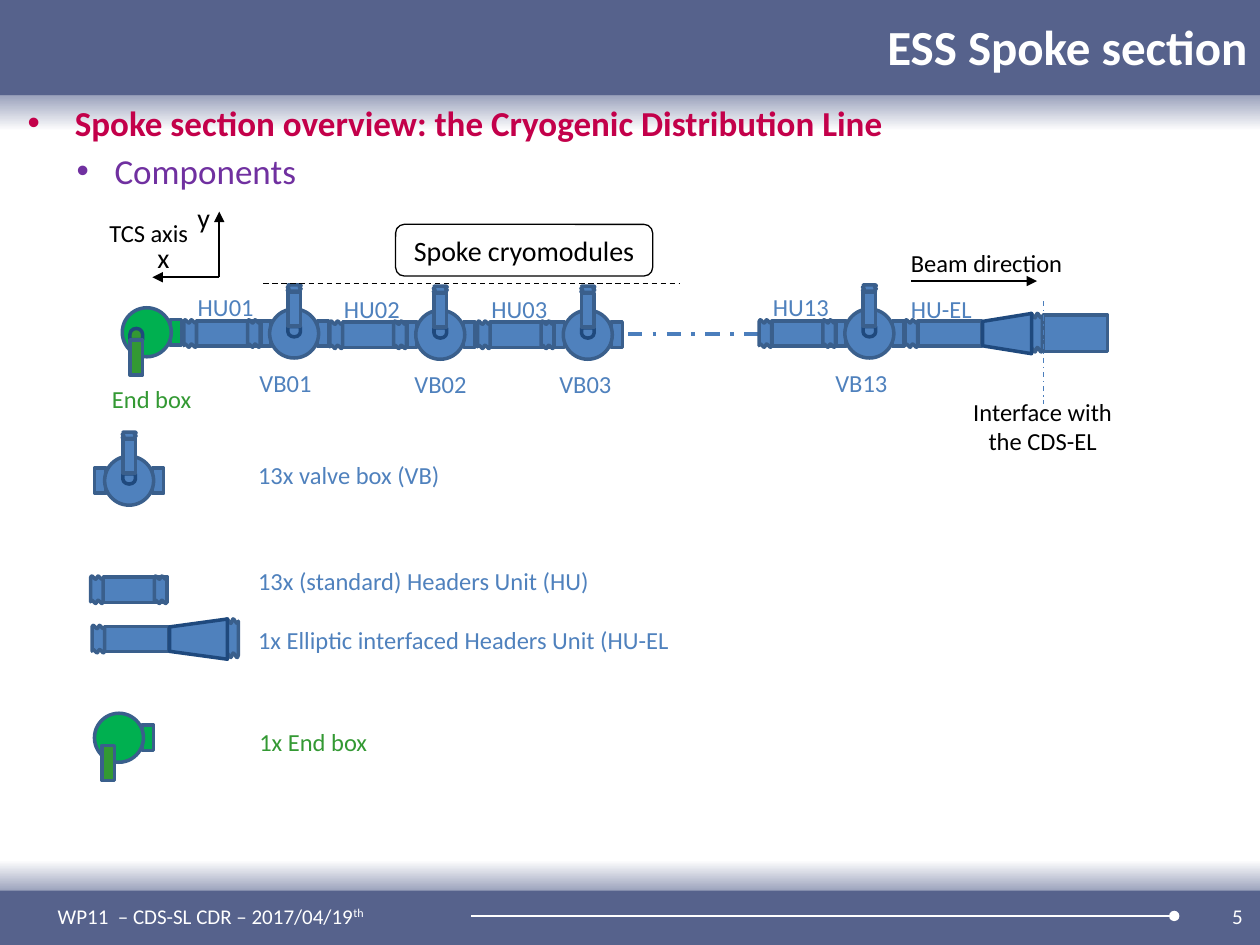
from dataclasses import dataclass

from lxml import etree
from pptx import Presentation
from pptx.dml.color import RGBColor
from pptx.enum import dml, shapes as kinds, text as te
from pptx.oxml import ns
from pptx.util import Pt

SLATE = RGBColor(0x56, 0x62, 0x8C)
HAZE = RGBColor(0x9C, 0xA3, 0xBD)
WHITE = RGBColor(0xFF, 0xFF, 0xFF)
BLACK = RGBColor(0, 0, 0)
CRIMSON = RGBColor(0xC3, 0x00, 0x4A)
PURPLE = RGBColor(0x70, 0x30, 0xA0)
BLUE = RGBColor(0x4F, 0x81, 0xBD)
BEAM_BLUE = RGBColor(0x4B, 0x7E, 0xBC)
EDGE = RGBColor(0x3A, 0x5F, 0x8C)
DARK_EDGE = RGBColor(0x1F, 0x49, 0x7D)
GREEN = RGBColor(0x00, 0xB0, 0x50)
LEAF = RGBColor(0x33, 0x99, 0x33)

Kind = kinds.MSO_SHAPE
Align = te.PP_ALIGN
Dash = dml.MSO_LINE
PIPE_HEIGHT = 14.4
STUB_OFFSET = 16.5
VALVE_OFFSET = 63


@dataclass
class Module:
    """A headers unit followed by its valve box."""
    number: str
    left: float
    center_y: float
    valve_label_left: float


@dataclass
class Label:
    text: str
    left: float
    top: float
    width: float
    color: RGBColor = BLACK
    size: float = 14


@dataclass
class Line:
    start: tuple[float, float]
    end: tuple[float, float]
    color: RGBColor = BLACK
    weight: float = 0.75
    dash: Dash | None = None
    tail: str = ""


MODULES = [
    Module("01", 105.1, 190.6, 141.1),
    Module("02", 188.6, 191.3, 229.7),
    Module("03", 272.9, 191.3, 312.5),
    Module("13", 433.8, 190.6, 470.2),
]
LABELS = [
    Label("End box", 56.9, 216, 60.5, LEAF),
    Label("Beam direction", 513.4, 138.2, 102.2),
    Label("x", 82.8, 133.9, 21.6, size=16),
    Label("y", 105.8, 110.9, 21.6, size=16),
    Label("HU-EL", 513.4, 164.2, 49.7, BLUE),
    Label("TCS axis", 55.4, 121, 59.8),
    Label("1x End box", 141.1, 411.8, 77, LEAF),
    Label("13x valve box (VB)", 140.4, 259.2, 119.5, BLUE),
]
LINES = [
    Line((596.2, 172.1), (596.2, 231.1), BEAM_BLUE, dash=Dash.DASH_DOT),
    Line((520.6, 160.6), (592.6, 160.6), weight=1, tail="triangle"),
    Line((125.3, 158.4), (87.1, 158.4), weight=1, tail="triangle"),
    Line((125.3, 158.4), (125.3, 121), weight=1, tail="triangle"),
    Line((150.5, 162), (388.1, 162), dash=Dash.DASH),
    Line((269.3, 523.4), (671, 523.4), WHITE, 1.5, tail="oval"),
]

presentation = Presentation()
presentation.slide_width, presentation.slide_height = Pt(720), Pt(540)
slide = presentation.slides.add_slide(presentation.slide_layouts[5])


def add_band(top: float, height: float, colors: list[RGBColor]) -> None:
    """Full-width band, solid for one colour and fading downwards for two."""
    band = slide.shapes.add_shape(Kind.RECTANGLE, 0, Pt(top), Pt(720), Pt(height))
    band.shadow.inherit = False
    band.line.fill.background()
    if len(colors) == 1:
        band.fill.solid()
        band.fill.fore_color.rgb = colors[0]
        return
    band.fill.gradient()
    band.fill.gradient_angle = 270
    for stop, color in zip(band.fill.gradient_stops, colors):
        stop.color.rgb = color


def add_part(kind: Kind, center_x: float, center_y: float, width: float, height: float,
             fill: RGBColor = BLUE, edge: RGBColor = EDGE, rotation: float = 0):
    part = slide.shapes.add_shape(kind, Pt(center_x - width / 2), Pt(center_y - height / 2),
                                  Pt(width), Pt(height))
    part.shadow.inherit = False
    part.rotation = rotation
    part.fill.solid()
    part.fill.fore_color.rgb = fill
    part.line.color.rgb = edge
    part.line.width = Pt(2)
    return part


def add_line(line: Line) -> None:
    connector = slide.shapes.add_connector(kinds.MSO_CONNECTOR.STRAIGHT,
                                           *map(Pt, line.start + line.end))
    connector.line.color.rgb = line.color
    connector.line.width = Pt(line.weight)
    if line.dash:
        connector.line.dash_style = line.dash
    if line.tail:
        etree.SubElement(connector.line._get_or_add_ln(), ns.qn("a:tailEnd"), type=line.tail)
    etree.SubElement(connector._element.spPr, ns.qn("a:effectLst"))


def write(paragraph, content: str, size: float = 14, color: RGBColor = BLACK,
          bold: bool = False, align: Align = Align.LEFT):
    paragraph.alignment = align
    run = paragraph.add_run()
    run.text = content
    font = run.font
    font.name, font.size, font.bold = "Calibri", Pt(size), bold
    font.color.rgb = color
    return run


def add_text(content: str, left: float, top: float, width: float, height: float = 24.5,
             wrap: bool = False, middle: bool = False, **style):
    frame = slide.shapes.add_textbox(Pt(left), Pt(top), Pt(width), Pt(height)).text_frame
    frame.word_wrap = wrap
    if middle:
        frame.vertical_anchor = te.MSO_ANCHOR.MIDDLE
    write(frame.paragraphs[0], content, **style)
    return frame


def add_bullet(paragraph, indent: float, hanging: float) -> None:
    properties = paragraph._p.get_or_add_pPr()
    properties.set("marL", str(Pt(indent)))
    properties.set("indent", str(-Pt(hanging)))
    etree.SubElement(properties, ns.qn("a:buFont"), typeface="Arial")
    etree.SubElement(properties, ns.qn("a:buChar"), char="•")


def add_pipe_start(left: float, center_y: float) -> None:
    add_part(Kind.RECTANGLE, left + 25.6, center_y, 36.7, PIPE_HEIGHT)
    add_part(Kind.DOUBLE_WAVE, left + 3.6, center_y, 7.2, 15.8)


def add_headers_unit(left: float, center_y: float) -> None:
    add_pipe_start(left, center_y)
    add_part(Kind.DOUBLE_WAVE, left + 40, center_y, 7.2, 15.8)


def add_elliptic_unit(left: float, center_y: float, cone_length: float) -> None:
    """Headers unit that widens to the elliptic line."""
    cone_left = left + 44.3
    add_part(Kind.DOUBLE_WAVE, cone_left + cone_length + 2.6, center_y - 0.5, 7.2, 22.3)
    add_pipe_start(left, center_y)
    cone = add_part(Kind.TRAPEZOID, cone_left + cone_length / 2, center_y, 23, cone_length,
                    edge=DARK_EDGE, rotation=270)
    cone.adjustments[0] = 0.197


def add_valve_box(x: float, y: float) -> None:
    for side in (-1, 1):
        add_part(Kind.RECTANGLE, x + side * STUB_OFFSET, y, 6.5, PIPE_HEIGHT)
    add_part(Kind.OVAL, x, y, 28, 28)
    add_part(Kind.FLOWCHART_DELAY, x, y - 1, 5.8, 7.2, edge=DARK_EDGE, rotation=90)
    add_part(Kind.RECTANGLE, x, y - 14, 19.4, 7.2, rotation=90)
    add_part(Kind.DOUBLE_WAVE, x, y - 26, 3.6, 7.9, rotation=90)


def add_end_box(x: float, y: float, with_elbow: bool) -> None:
    add_part(Kind.RECTANGLE, x + STUB_OFFSET, y, 6.5, PIPE_HEIGHT, GREEN)
    add_part(Kind.OVAL, x, y, 28, 28, GREEN)
    if with_elbow:
        add_part(Kind.FLOWCHART_DELAY, x - 6, y + 1, 6.5, 7.2, LEAF, DARK_EDGE, 270)
    add_part(Kind.RECTANGLE, x - 6, y + 14.4, 20.2, 7.2, LEAF, rotation=270)


def add_frame() -> None:
    add_band(0, 54.7, [SLATE])
    add_band(54.7, 20, [HAZE, WHITE])
    add_band(491.5, 17.5, [WHITE, HAZE])
    add_band(509, 31, [SLATE])
    footer = add_text("WP11  – CDS-SL CDR – 2017/04/19", 25.9, 509, 254.2, 28.8,
                      wrap=True, middle=True, size=12, color=WHITE)
    ordinal = write(footer.paragraphs[0], "th", 12, WHITE)
    ordinal.font._element.set("baseline", "30000")
    add_text("5", 549.4, 509, 167.8, 28.8, wrap=True, middle=True, size=12, color=WHITE,
             align=Align.RIGHT)

    title = slide.shapes.title
    title.left, title.top, title.width, title.height = Pt(76.3), Pt(-2), Pt(643.7), Pt(57)
    title.text_frame.vertical_anchor = te.MSO_ANCHOR.MIDDLE
    write(title.text_frame.paragraphs[0], "ESS Spoke section", 28, WHITE, True, Align.RIGHT)
    slide.shapes._spTree.append(title._element)

    body = slide.shapes.add_textbox(Pt(14.4), Pt(54.7), Pt(705.6), Pt(455)).text_frame
    body.word_wrap = True
    body.margin_left = body.margin_right = body.margin_bottom = Pt(1.4)
    heading, subheading = body.paragraphs[0], body.add_paragraph()
    subheading.level = 1
    subheading.space_before = Pt(3)
    add_bullet(heading, 27, 27)
    add_bullet(subheading, 49.7, 21.6)
    write(heading, "Spoke section overview: the Cryogenic Distribution Line", 20, CRIMSON, True)
    write(subheading, "Components", 20, PURPLE)


def add_distribution_line() -> None:
    add_line(Line((314.6, 190.8), (433.4, 190.8), BEAM_BLUE, 2, Dash.DASH_DOT))
    for module in MODULES:
        add_valve_box(module.left + VALVE_OFFSET, module.center_y)
        add_headers_unit(module.left, module.center_y)
        add_text("HU" + module.number, module.left + 0.8, module.center_y - 27, 46.8, color=BLUE)
        add_text("VB" + module.number, module.valve_label_left, module.center_y + 16, 44.6,
                 color=BLUE)
    add_part(Kind.RECTANGLE, 614.5, 190.4, 36.7, 20.9)
    add_elliptic_unit(517.2, 190.6, 28)
    add_end_box(83.9, 189.9, True)
    add_text("Interface with the CDS-EL", 547.9, 223.2, 95.8, 41, wrap=True, align=Align.CENTER)

    box = slide.shapes.add_shape(Kind.ROUNDED_RECTANGLE, Pt(226.1), Pt(128.2), Pt(146.9), Pt(29.5))
    box.shadow.inherit = False
    box.fill.background()
    box.line.color.rgb, box.line.width = BLACK, Pt(0.75)
    box.text_frame.word_wrap = False
    write(box.text_frame.paragraphs[0], "Spoke cryomodules", 16, align=Align.CENTER)


def add_legend() -> None:
    add_valve_box(73.8, 274.7)
    add_headers_unit(51.8, 337)
    add_elliptic_unit(52.6, 365.2, 33.1)
    add_end_box(68, 421.6, False)
    units = add_text("13x (standard) Headers Unit (HU)", 140.4, 319.7, 252, 58.3, color=BLUE)
    elliptic = units.add_paragraph()
    elliptic.space_before = Pt(17)
    write(elliptic, "1x Elliptic interfaced Headers Unit (HU-EL", color=BLUE)


add_frame()
add_distribution_line()
add_legend()
for label in LABELS:
    add_text(label.text, label.left, label.top, label.width, size=label.size, color=label.color)
for line in LINES:
    add_line(line)
presentation.save("out.pptx")
